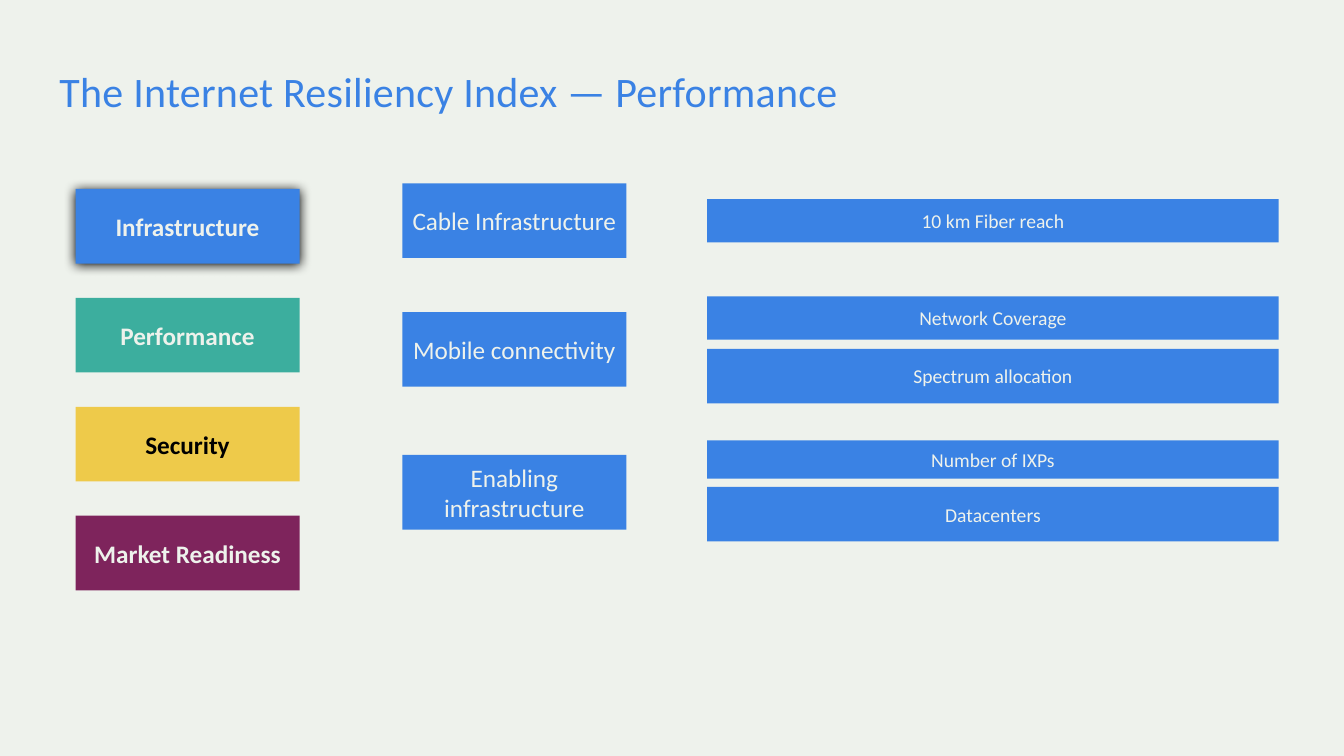
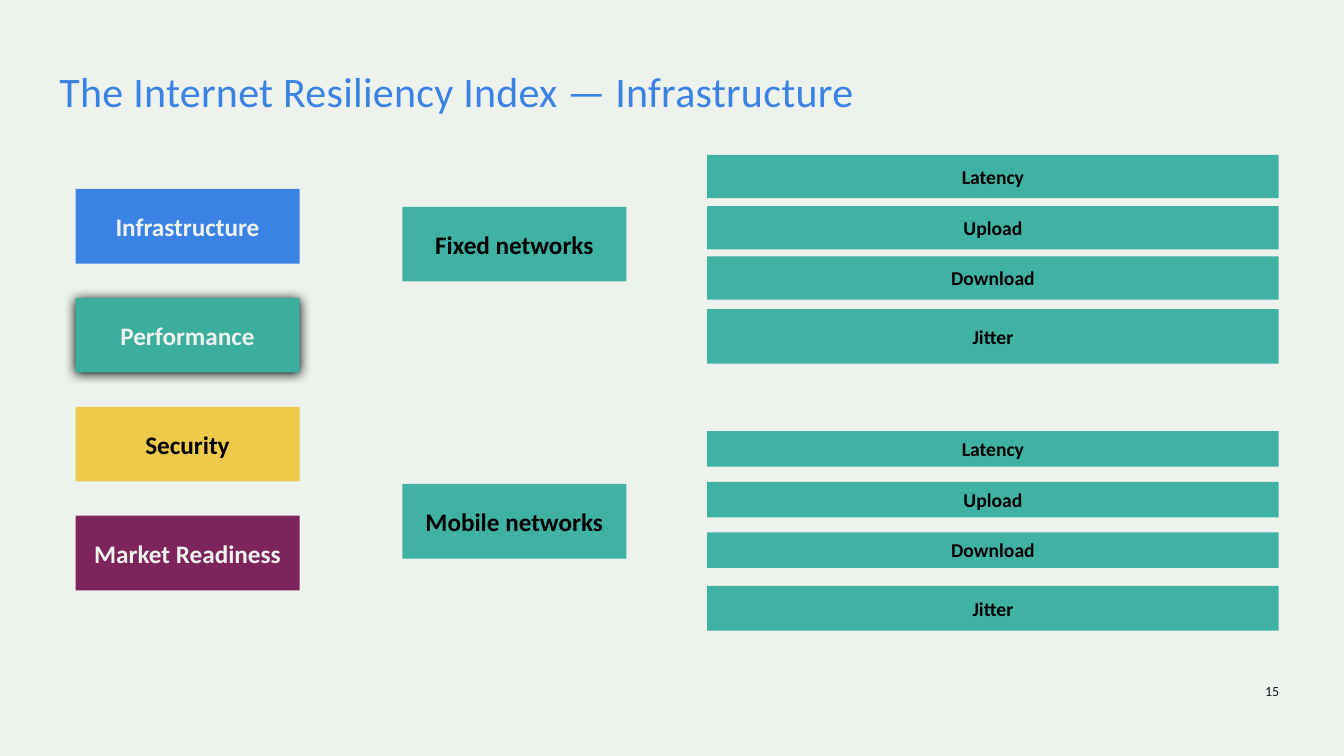
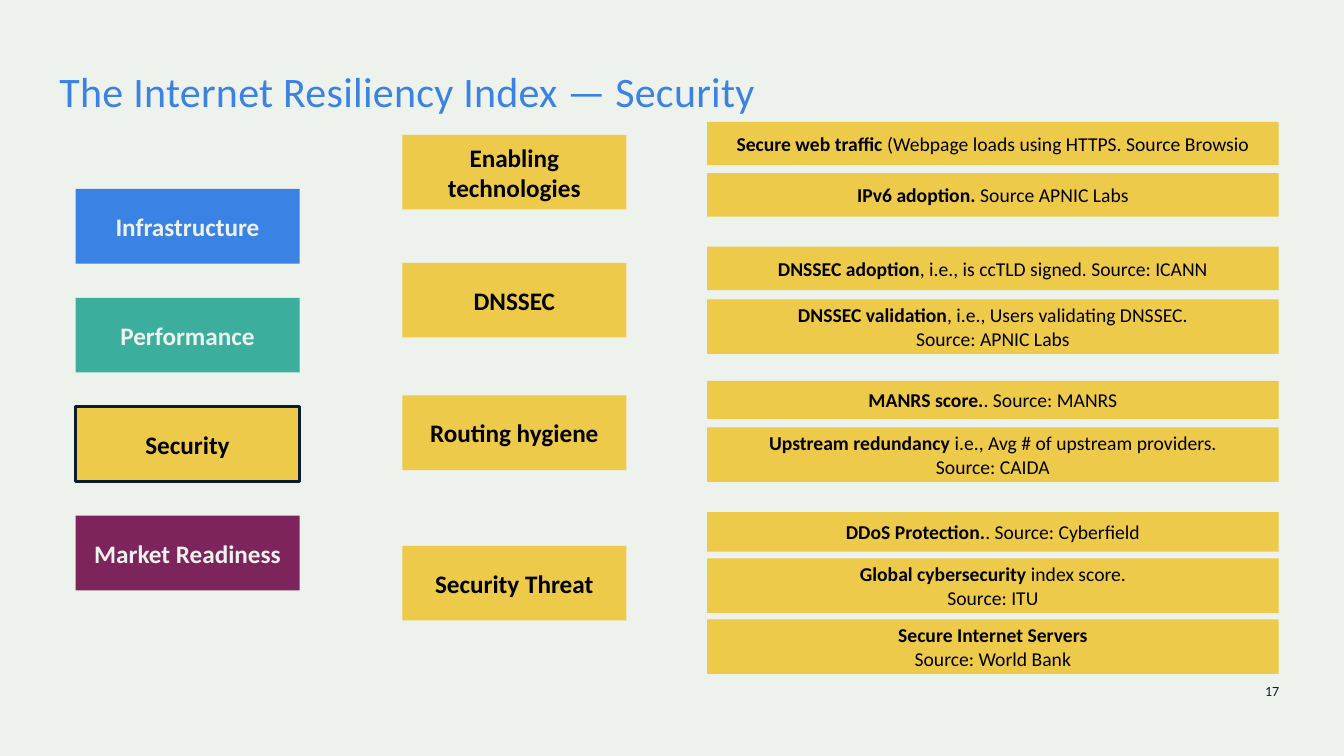
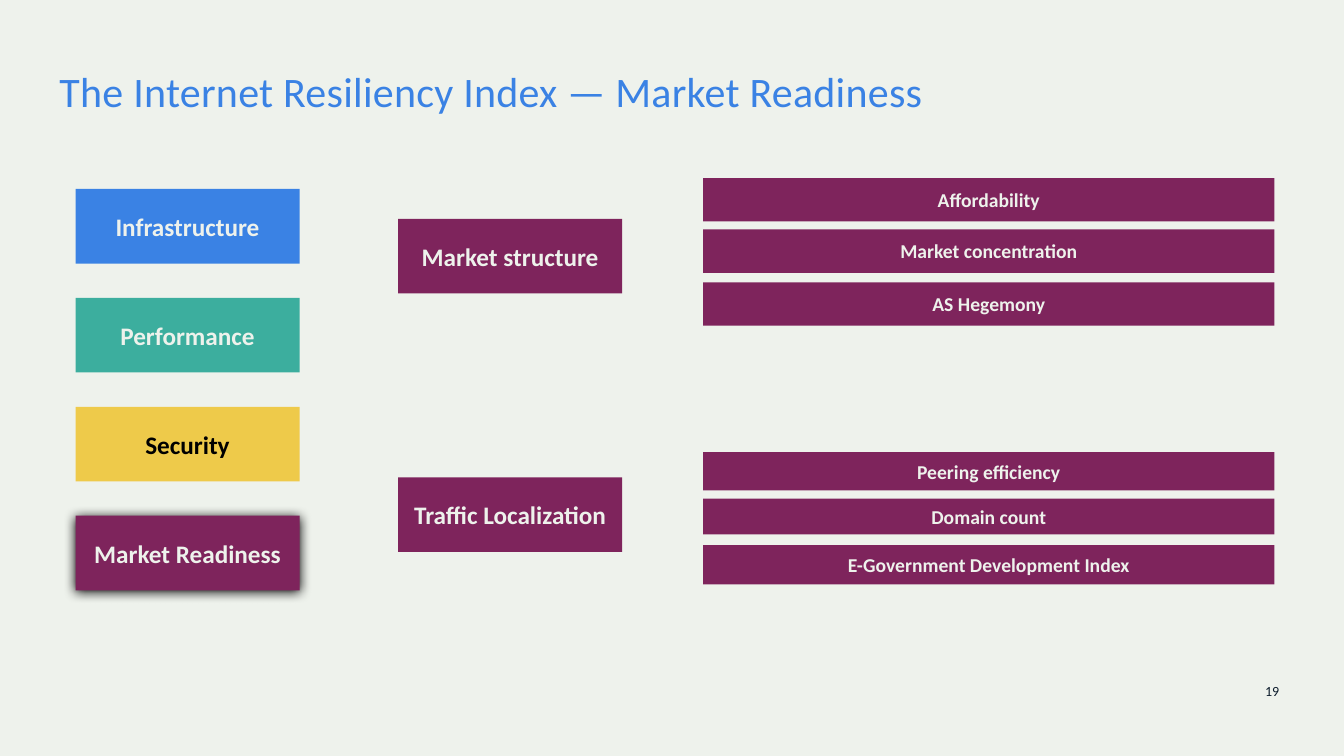
from lxml import etree
from pptx import Presentation
from pptx.dml.color import RGBColor
from pptx.enum import shapes, text
from pptx.oxml import ns
from pptx.util import Pt

PAPER = RGBColor(0xEE, 0xF2, 0xEC)
BLUE = RGBColor(0x3A, 0x82, 0xE4)
GREEN = RGBColor(0x3C, 0xAE, 0x9E)
LIGHT_GREEN = RGBColor(0x40, 0xB2, 0xA4)
YELLOW = RGBColor(0xEE, 0xCA, 0x4A)
PURPLE = RGBColor(0x7E, 0x24, 0x5C)
BLACK = RGBColor(0x00, 0x00, 0x00)
NAVY = RGBColor(0x0C, 0x1C, 0x2C)

FONT = "Calibri"
BOX_WIDTH, BOX_HEIGHT = 160, 53.3
BAR_WIDTH = 408.2
PILLAR_LEFT, PILLAR_TOP, PILLAR_STEP = 54, 135, 77.8
CENTER = text.PP_ALIGN.CENTER

PILLARS = [
    ("Infrastructure", BLUE, PAPER),
    ("Performance", GREEN, PAPER),
    ("Security", YELLOW, BLACK),
    ("Market Readiness", PURPLE, PAPER),
]

SLIDES = [
    {
        "title": "Performance", "active": "Infrastructure", "number": None,
        "fill": BLUE, "ink": PAPER, "bold": False, "columns": (287.4, 505.2),
        "categories": [
            (131, "Cable Infrastructure"),
            (223, "Mobile connectivity"),
            (325, "Enabling infrastructure"),
        ],
        "bars": [
            (142.2, 31, "10 km Fiber reach"),
            (211.7, 31, "Network Coverage"),
            (249.2, 39, "Spectrum allocation"),
            (314.6, 27.3, "Number of IXPs"),
            (347.8, 39, "Datacenters"),
        ],
    },
    {
        "title": "Infrastructure", "active": "Performance", "number": "15",
        "fill": LIGHT_GREEN, "ink": BLACK, "bold": True, "columns": (287.4, 505.2),
        "categories": [
            (147.8, "Fixed networks"),
            (345.7, "Mobile networks"),
        ],
        "bars": [
            (110.6, 31, "Latency"),
            (147.2, 31, "Upload"),
            (183.1, 31, "Download"),
            (220.8, 39, "Jitter"),
            (307.9, 25.4, "Latency"),
            (344.3, 25.4, "Upload"),
            (380.2, 25.4, "Download"),
            (418.5, 32, "Jitter"),
        ],
    },
    {
        "title": "Security", "active": "Security", "number": "17",
        "fill": YELLOW, "ink": BLACK, "bold": True, "columns": (287.4, 505.2),
        "categories": [
            (96.3, "Enabling technologies"),
            (187.7, "DNSSEC"),
            (282.5, "Routing hygiene"),
            (389.9, "Security Threat"),
        ],
        "bars": [
            (87, 31, "Secure web traffic", " (Webpage loads using HTTPS. Source Browsio"),
            (123.7, 31, "IPv6 adoption.", " Source APNIC Labs"),
            (176.2, 31, "DNSSEC adoption", ", i.e., is ccTLD signed. Source: ICANN"),
            (213.8, 39, "DNSSEC validation", ", i.e., Users validating DNSSEC.", "Source: APNIC Labs"),
            (272, 27.3, "MANRS score.", ". Source: MANRS"),
            (305.3, 39, "Upstream redundancy", " i.e., Avg # of upstream providers.", "Source: CAIDA"),
            (365.8, 28.2, "DDoS Protection.", ". Source: Cyberfield"),
            (398.9, 39, "Global cybersecurity", " index score.", "Source: ITU"),
            (442.4, 39, "Secure Internet Servers", "", "Source: World Bank"),
        ],
    },
    {
        "title": "Market Readiness", "active": "Market Readiness", "number": "19",
        "fill": PURPLE, "ink": PAPER, "bold": True, "columns": (284.4, 502.2),
        "categories": [
            (156.4, "Market structure"),
            (341, "Traffic Localization"),
        ],
        "bars": [
            (127.2, 31, "Affordability"),
            (163.9, 31, "Market concentration"),
            (201.7, 31, "AS Hegemony"),
            (323, 27.3, "Peering efficiency"),
            (356.2, 25.6, "Domain count"),
            (389.3, 28.2, "E-Government Development Index"),
        ],
    },
]


def write(shape, lines, size, color, alignment):
    frame = shape.text_frame
    frame.word_wrap = True
    for index, runs in enumerate(lines):
        paragraph = frame.paragraphs[0] if index == 0 else frame.add_paragraph()
        paragraph.alignment = alignment
        for words, bold in runs:
            run = paragraph.add_run()
            run.text = words
            run.font.name = FONT
            run.font.size = Pt(size)
            run.font.bold = bold
            run.font.color.rgb = color
    return frame


def add_box(slide, left, top, width, height, fill, lines, size, ink):
    box = slide.shapes.add_shape(
        shapes.MSO_SHAPE.RECTANGLE, Pt(left), Pt(top), Pt(width), Pt(height))
    box.shadow.inherit = False
    box.fill.solid()
    box.fill.fore_color.rgb = fill
    box.line.fill.background()
    frame = write(box, lines, size, ink, CENTER)
    frame.vertical_anchor = text.MSO_ANCHOR.MIDDLE
    frame.margin_left = frame.margin_right = Pt(7)
    return box


presentation = Presentation()
presentation.slide_width, presentation.slide_height = Pt(960), Pt(540)
background = presentation.slide_master.background.fill
background.solid()
background.fore_color.rgb = PAPER

for content in SLIDES:
    slide = presentation.slides.add_slide(presentation.slide_layouts[6])

    labels = [(42.5, 44.6, 875, 44.6, "The Internet Resiliency Index — " + content["title"],
               30, BLUE, text.PP_ALIGN.LEFT)]
    if content["number"]:
        labels.append((697.7, 487.4, 216, 28.8, content["number"],
                       10, NAVY, text.PP_ALIGN.RIGHT))
    for left, top, width, height, words, size, color, alignment in labels:
        label = slide.shapes.add_textbox(Pt(left), Pt(top), Pt(width), Pt(height))
        frame = write(label, [[(words, False)]], size, color, alignment)
        frame.margin_left = frame.margin_right = Pt(0)
        frame.margin_top = frame.margin_bottom = Pt(0)
    title = slide.shapes[0].text_frame.paragraphs[0]
    title.line_spacing = 1.06
    title.runs[0].font._element.set("spc", "20")

    for index, (name, fill, ink) in enumerate(PILLARS):
        pillar = add_box(slide, PILLAR_LEFT, PILLAR_TOP + index * PILLAR_STEP,
                         BOX_WIDTH, BOX_HEIGHT, fill, [[(name, True)]], 18, ink)
        if name != content["active"]:
            continue
        if name == "Security":
            pillar.line.color.rgb = NAVY
            pillar.line.width = Pt(2.25)
        else:
            effects = pillar._element.spPr.find(ns.qn("a:effectLst"))
            shadow = etree.SubElement(
                effects, ns.qn("a:outerShdw"), blurRad=str(Pt(8.5)), dist=str(Pt(1)),
                dir="5400000", algn="t", rotWithShape="0")
            etree.SubElement(shadow, ns.qn("a:srgbClr"), val=str(BLACK))

    category_left, bar_left = content["columns"]
    fill, ink, bold = content["fill"], content["ink"], content["bold"]
    for top, name in content["categories"]:
        add_box(slide, category_left, top, BOX_WIDTH, BOX_HEIGHT, fill,
                [[(name, bold)]], 18, ink)

    for top, height, indicator, *details in content["bars"]:
        lines = [[(indicator, bold)]]
        if details and details[0]:
            lines[0].append((details[0], False))
        for source in details[1:]:
            lines.append([(source, False)])
        add_box(slide, bar_left, top, BAR_WIDTH, height, fill, lines, 14, ink)

presentation.save("out.pptx")
